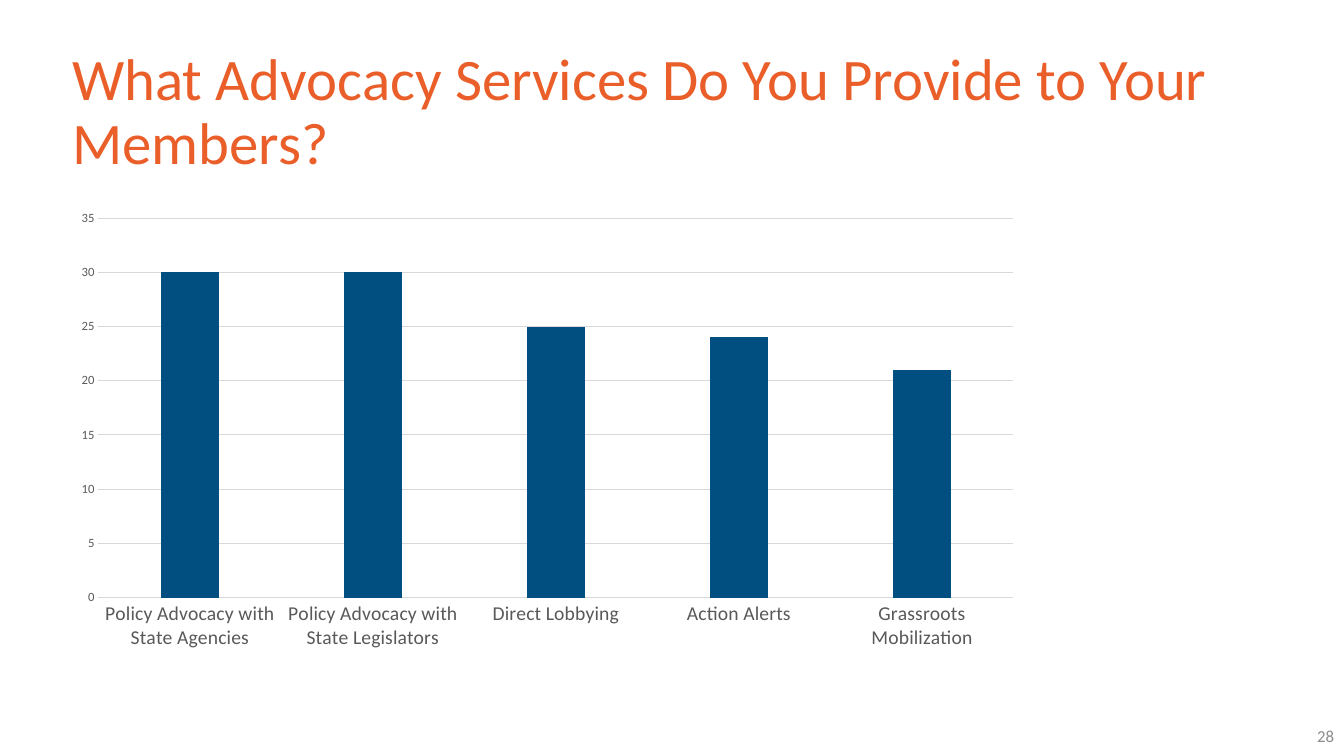
import pptx
import pptx.chart.data
import pptx.dml.color
import pptx.enum.chart
import pptx.enum.text
import pptx.util

Cm = pptx.util.Cm
Pt = pptx.util.Pt
ALIGN = pptx.enum.text.PP_ALIGN

COLORS = {
    "title": "EA5E29",
    "number": "8C8C8C",
    "bar": "014F80",
    "label": "595959",
    "rule": "D9D9D9",
    "chart": "000000",
}
SERVICES = {
    "Policy Advocacy with State Agencies": 30,
    "Policy Advocacy with State Legislators": 30,
    "Direct Lobbying": 25,
    "Action Alerts": 24,
    "Grassroots Mobilization": 21,
}


def color(name):
    return pptx.dml.color.RGBColor.from_string(COLORS[name])


def apply(target, formats):
    for name, value in formats.items():
        setattr(target, name, value)


def style_font(font, size, color_name):
    apply(font, {"name": "Calibri", "size": Pt(size), "bold": False})
    font.color.rgb = color(color_name)


def style_line(line):
    line.color.rgb = color("rule")
    line.width = Pt(0.75)


def add_text(page, box, words, size, color_name, formats):
    frame = page.shapes.add_textbox(*box).text_frame
    apply(frame, {
        "word_wrap": True,
        "auto_size": pptx.enum.text.MSO_AUTO_SIZE.NONE,
        "vertical_anchor": pptx.enum.text.MSO_ANCHOR.MIDDLE,
    })
    para = frame.paragraphs[0]
    apply(para, formats)
    span = para.add_run()
    span.text = words
    style_font(span.font, size, color_name)


def add_services_chart(page, box):
    data = pptx.chart.data.CategoryChartData(number_format="General")
    data.categories = list(SERVICES)
    data.add_series("Series 1", list(SERVICES.values()))
    kind = pptx.enum.chart.XL_CHART_TYPE.COLUMN_CLUSTERED
    chart = page.shapes.add_chart(kind, *box, data).chart
    apply(chart, {"has_legend": False, "has_title": False})
    style_font(chart.font, 10, "chart")

    plot = chart.plots[0]
    apply(plot, {"gap_width": 219, "overlap": -27, "vary_by_categories": False})
    fill = plot.series[0].format.fill
    fill.solid()
    fill.fore_color.rgb = color("bar")

    for axis, size in ((chart.category_axis, 14), (chart.value_axis, 9)):
        apply(axis, {
            "major_tick_mark": pptx.enum.chart.XL_TICK_MARK.NONE,
            "minor_tick_mark": pptx.enum.chart.XL_TICK_MARK.NONE,
        })
        style_font(axis.tick_labels.font, size, "label")
    style_line(chart.category_axis.format.line)
    apply(chart.value_axis, {
        "minimum_scale": 0,
        "maximum_scale": 35,
        "major_unit": 5,
        "has_major_gridlines": True,
    })
    chart.value_axis.format.line.fill.background()
    style_line(chart.value_axis.major_gridlines.format.line)


def add_services_page(deck, box):
    left, top, width, height = box
    page = deck.slides.add_slide(deck.slide_layouts[6])
    margin = left + Cm(1.57)
    add_text(page, (margin, top + Cm(1.02), Cm(30.73), Cm(3.68)),
             "What Advocacy Services Do You Provide to Your Members?",
             42, "title", {"line_spacing": 0.9})
    number_width = Cm(7.62)
    add_text(page, (left + width - number_width, top + Cm(18.03), number_width, Cm(1.02)),
             "28", 12, "number", {"alignment": ALIGN.RIGHT})
    add_services_chart(page, (margin, top + Cm(5.08), Cm(24.46), Cm(11.53)))


def main():
    deck = pptx.Presentation()
    apply(deck, {"slide_width": Cm(33.87), "slide_height": Cm(19.05)})
    add_services_page(deck, (0, 0, deck.slide_width, deck.slide_height))
    deck.save("out.pptx")


if __name__ == "__main__":
    main()
